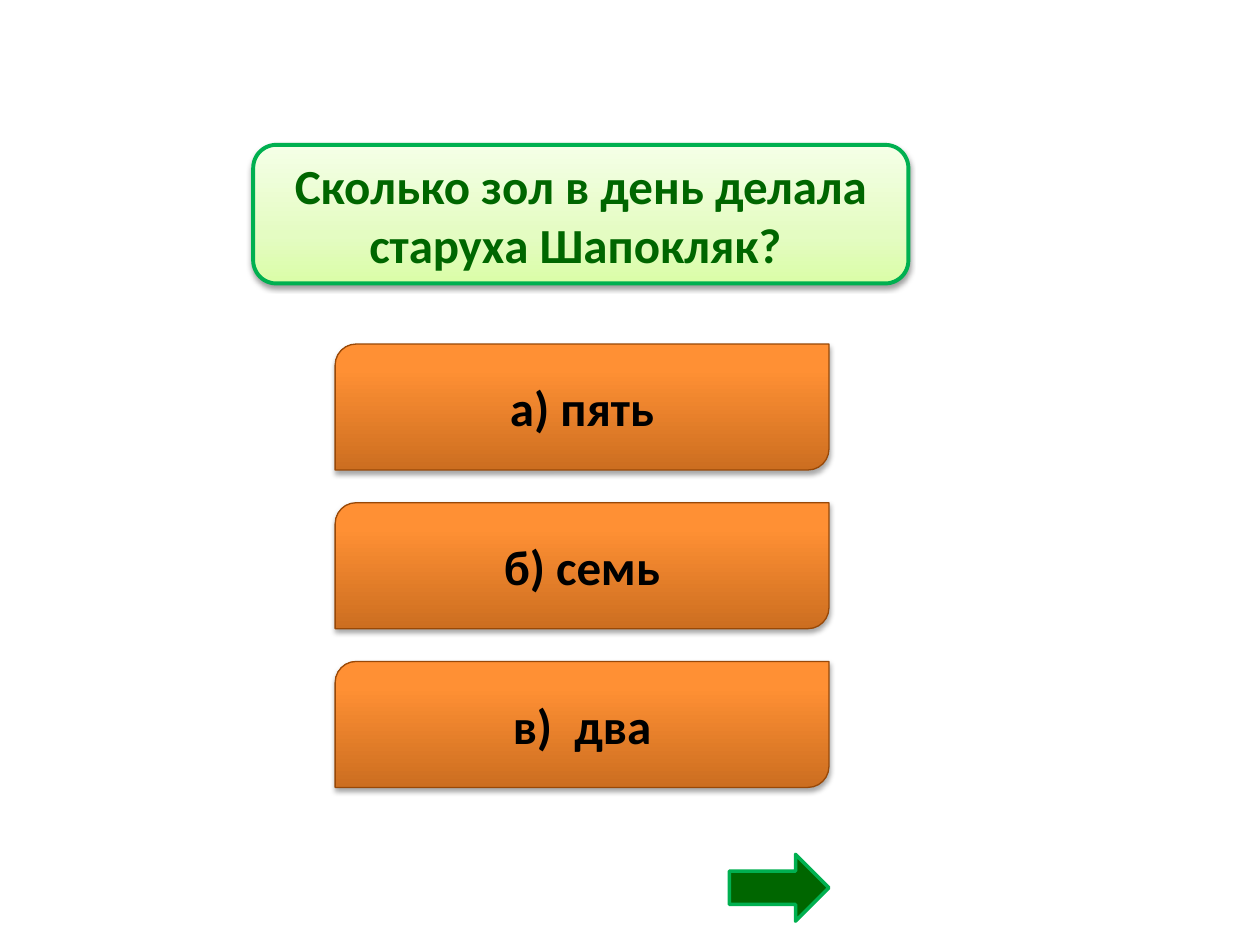
"""Build a quiz slide with one question, three answers and a forward arrow."""
from lxml.etree import SubElement
from pptx import Presentation
from pptx.dml.color import RGBColor
from pptx.enum.shapes import MSO_SHAPE
from pptx.enum.text import MSO_ANCHOR, PP_ALIGN
from pptx.oxml.ns import qn
from pptx.util import Pt

BLACK = RGBColor(0x00, 0x00, 0x00)
DARK_GREEN = RGBColor(0x00, 0x66, 0x00)
GREEN = RGBColor(0x00, 0xB0, 0x50)
BROWN = RGBColor(0x98, 0x48, 0x07)
LIME_STOPS = [
    (0, RGBColor(0xDA, 0xFD, 0xA7)),
    (35, RGBColor(0xE4, 0xFC, 0xC2)),
    (100, RGBColor(0xF5, 0xFF, 0xE7)),
]
ORANGE_STOPS = [
    (0, RGBColor(0xCC, 0x6E, 0x20)),
    (80, RGBColor(0xFF, 0x90, 0x34)),
    (100, RGBColor(0xFF, 0x91, 0x36)),
]

QUESTION = "Сколько зол в день делала старуха Шапокляк? "
ANSWERS = ["а) пять", "б) семь", "в)  два"]
ANSWER_LEFT, ANSWER_TOP = 191.5, 196.6
ANSWER_WIDTH, ANSWER_HEIGHT = 282.2, 72
ANSWER_STEP = 90.7
ARROW_WIDTH, ARROW_HEIGHT = 56.9, 38.2


def add_outlined_shape(page, kind, left, top, width, height, line_color, line_width):
    """Add a preset shape with a coloured outline and no inherited shadow."""
    shape = page.shapes.add_shape(kind, Pt(left), Pt(top), Pt(width), Pt(height))
    shape.shadow.inherit = False
    shape.line.color.rgb = line_color
    shape.line.width = Pt(line_width)
    return shape


def set_gradient(shape, stops):
    """Fill the shape with a gradient that rises from the bottom edge."""
    shape.fill.gradient()
    shape.fill.gradient_angle = 90
    stop_list = shape.element.spPr.find(".//" + qn("a:gsLst"))
    for stop in list(stop_list):
        stop_list.remove(stop)
    for position, color in stops:
        stop = SubElement(stop_list, qn("a:gs"), pos=str(position * 1000))
        SubElement(stop, qn("a:srgbClr"), val=str(color))


def set_shadow(shape, opacity, distance):
    """Drop a soft black shadow straight below the shape."""
    effects = shape.element.spPr.find(qn("a:effectLst"))
    shadow = SubElement(
        effects, qn("a:outerShdw"), blurRad=str(Pt(3.1)), dist=str(Pt(distance)),
        dir="5400000", rotWithShape="0",
    )
    color = SubElement(shadow, qn("a:srgbClr"), val=str(BLACK))
    SubElement(color, qn("a:alpha"), val=str(opacity * 1000))


def write_label(shape, text, color):
    """Write one bold centred line of text in the shape."""
    frame = shape.text_frame
    frame.word_wrap = True
    frame.vertical_anchor = MSO_ANCHOR.MIDDLE
    paragraph = frame.paragraphs[0]
    paragraph.alignment = PP_ALIGN.CENTER
    span = paragraph.add_run()
    span.text = text
    span.font.name = "Calibri"
    span.font.size = Pt(28)
    span.font.bold = True
    span.font.color.rgb = color


def add_question(page):
    """Add the green question box."""
    box = add_outlined_shape(
        page, MSO_SHAPE.ROUNDED_RECTANGLE, 144.7, 82.8, 374.4, 79.2, GREEN, 2.25
    )
    set_gradient(box, LIME_STOPS)
    set_shadow(box, 38, 1.6)
    write_label(box, QUESTION, DARK_GREEN)


def add_answer(page, index, text):
    """Add one orange answer box at its place in the column."""
    box = add_outlined_shape(
        page, MSO_SHAPE.ROUND_2_DIAG_RECTANGLE, ANSWER_LEFT,
        ANSWER_TOP + index * ANSWER_STEP, ANSWER_WIDTH, ANSWER_HEIGHT, BROWN, 0.75,
    )
    set_gradient(box, ORANGE_STOPS)
    set_shadow(box, 35, 1.8)
    write_label(box, text, BLACK)


def add_forward_arrow(page):
    """Add the green arrow, flush with the right edge of the answers."""
    left = ANSWER_LEFT + ANSWER_WIDTH - ARROW_WIDTH
    arrow = add_outlined_shape(
        page, MSO_SHAPE.RIGHT_ARROW, left, 488.2, ARROW_WIDTH, ARROW_HEIGHT, GREEN, 2
    )
    arrow.fill.solid()
    arrow.fill.fore_color.rgb = DARK_GREEN


def main():
    """Build the deck and save it."""
    deck = Presentation()
    deck.slide_width, deck.slide_height = Pt(720), Pt(540)
    page = deck.slides.add_slide(deck.slide_layouts[6])
    add_question(page)
    for index, text in enumerate(ANSWERS):
        add_answer(page, index, text)
    add_forward_arrow(page)
    deck.save("out.pptx")


if __name__ == "__main__":
    main()
